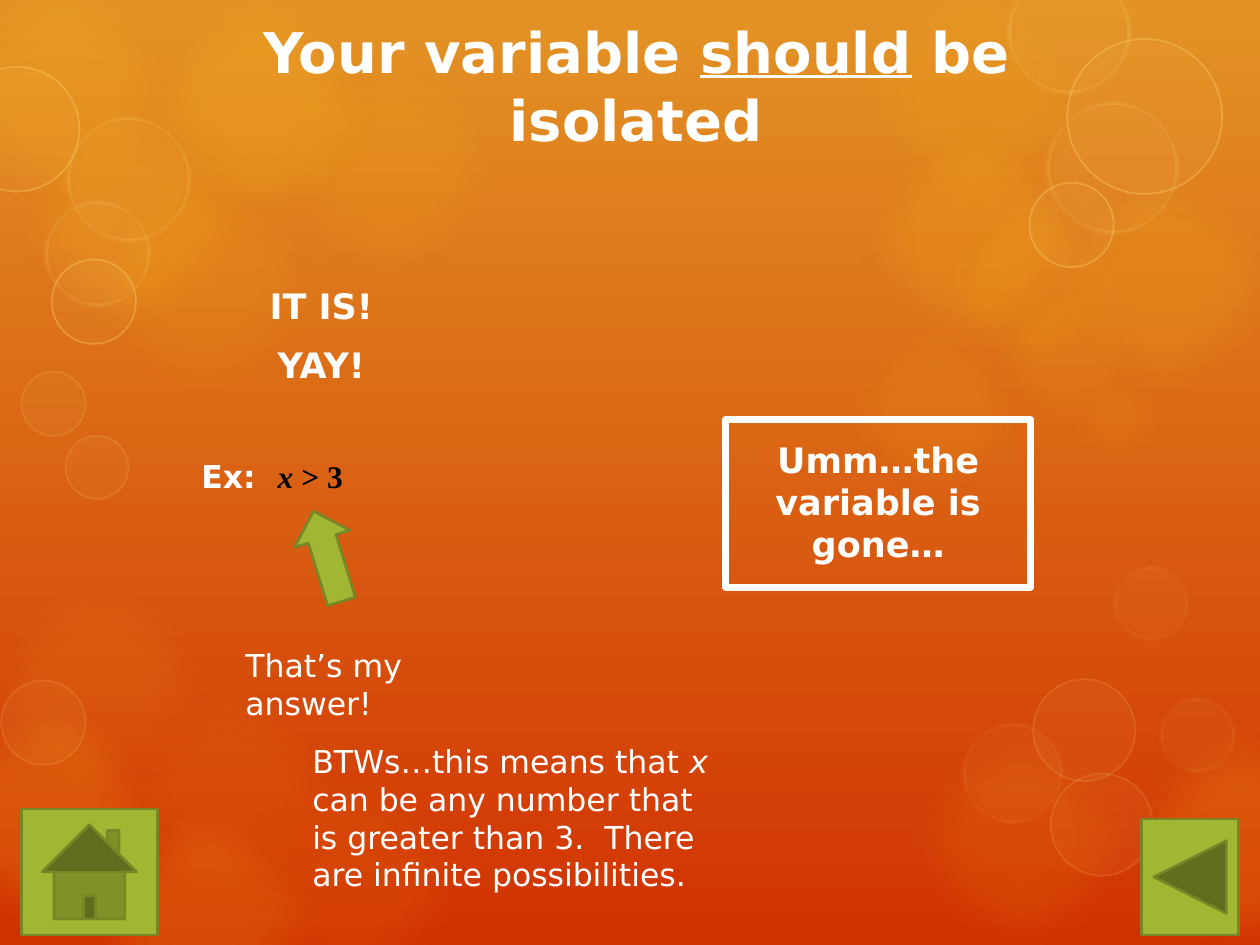
from lxml.etree import SubElement
from pptx import Presentation
from pptx.dml.color import RGBColor
from pptx.enum.shapes import MSO_SHAPE
from pptx.enum.text import MSO_ANCHOR, PP_ALIGN
from pptx.oxml.ns import qn
from pptx.util import Inches, Pt

TOP = RGBColor(0xE3, 0x93, 0x25)
BOTTOM = RGBColor(0xD1, 0x32, 0x02)
GOLD = RGBColor(0xFD, 0xC6, 0x1B)
PALE = RGBColor(0xFF, 0xE2, 0x81)
CREAM = RGBColor(0xFE, 0xEB, 0xAE)
GREEN = RGBColor(0xA1, 0xB6, 0x33)
OLIVE = RGBColor(0x77, 0x87, 0x26)
WHITE = RGBColor(0xFF, 0xFF, 0xFF)
BLACK = RGBColor(0, 0, 0)
FONT = "DejaVu Sans"
MATH_FONT = "Times New Roman"

GLOW_SIZE = 2.09
GLOWS = {
    8: [(-0.26, 4.42), (0.77, 5.24), (1.73, 5.96)],
    10: [(0.57, 1.2), (2.05, 0.31), (6.69, -0.29), (7.06, 5.62)],
    15: [(-0.56, -0.32), (0, 0.72), (8.2, 1.2), (6.69, 0.86)],
    16: [(0.57, 6.27), (8.81, 5.62), (-0.68, 5.41)],
    20: [(1.01, -0.18)],
}
HALOS = [(7.52, 1.59, 1.33), (7.89, 2.24, 1.14), (8.47, 2.91, 0.79),
         (6.75, 2.62, 1.33)]
RINGS = {
    (1, 15): [(0.01, 5.4, 0.67), (8.34, 6.14, 0.81), (8.2, 5.39, 0.81),
              (0.17, 2.95, 0.51), (0.52, 3.46, 0.5)],
    (1, 30): [(-0.36, 0.53, 0.99), (0.41, 2.06, 0.67), (8.47, 0.31, 1.23),
              (8.17, 1.45, 0.67)],
    (5, 15): [(7.63, 5.73, 0.81), (8.83, 4.48, 0.61), (9.2, 5.53, 0.61)],
    (5, 30): [(0.52, 0.92, 1), (0.35, 1.59, 0.85), (7.99, -0.24, 0.99),
              (8.3, 0.8, 1.06)],
}


def place(sp, box):
    """Move a shape to a box of left, top, width and height in inches."""
    sp.left, sp.top, sp.width, sp.height = map(Inches, box)


def set_alpha(fill, color, percent):
    """Fill with a colour at the given opacity."""
    fill.solid()
    fill.fore_color.rgb = color
    clr = fill._xPr.find(qn("a:solidFill"))[0]
    SubElement(clr, qn("a:alpha")).set("val", str(percent * 1000))


def add_bubble(s, circle, color, alpha, soft=0, line=None):
    """Add a translucent circle to the layout behind the slide."""
    x, y, d = circle
    sp = s.shapes.add_shape(MSO_SHAPE.OVAL, *map(Inches, (x, y, d, d)))
    set_alpha(sp.fill, color, alpha)
    if line:
        line_color, width, line_alpha = line
        sp.line.width = Pt(width)
        set_alpha(sp.line.fill, line_color, line_alpha)
    else:
        sp.line.fill.background()
    sp.shadow.inherit = False
    if soft:
        effects = sp._element.spPr.find(qn("a:effectLst"))
        SubElement(effects, qn("a:softEdge")).set("rad", str(Inches(soft)))
    s.slide_layout.shapes._spTree.append(sp._element)


def add_backdrop(s):
    """Paint the gradient and the bubbles."""
    fill = s.background.fill
    fill.gradient()
    fill.gradient_angle = 270
    for stop, color in zip(fill.gradient_stops, (TOP, BOTTOM)):
        stop.color.rgb = color
    for alpha, spots in GLOWS.items():
        for x, y in spots:
            add_bubble(s, (x, y, GLOW_SIZE), GOLD, alpha, 0.3)
    for circle in HALOS:
        add_bubble(s, circle, GOLD, 10, 0.2, (CREAM, 14, 6))
    for (width, line_alpha), circles in RINGS.items():
        soft = 0.05 if width > 1 else 0
        for circle in circles:
            add_bubble(s, circle, PALE, 5, soft, (PALE, width, line_alpha))


def add_run(p, text, size, bold=False, italic=None, underline=None,
            font=FONT, color=WHITE):
    """Append a formatted run to a paragraph."""
    r = p.add_run()
    r.text = text
    f = r.font
    f.size, f.name, f.bold = Pt(size), font, bold
    f.italic, f.underline = italic, underline
    f.color.rgb = color


def add_title(s, box):
    """Fill the title placeholder."""
    sp = s.shapes.title
    place(sp, box)
    sp.text_frame.vertical_anchor = MSO_ANCHOR.MIDDLE
    p = sp.text_frame.paragraphs[0]
    p.alignment = PP_ALIGN.CENTER
    add_run(p, "Your variable ", 32, True)
    add_run(p, "should", 32, True, underline=True)
    add_run(p, " be isolated", 32, True)


def add_body(s, box, lines):
    """Fill the body placeholder with centred lines without bullets."""
    sp = s.placeholders[1]
    place(sp, box)
    tf = sp.text_frame
    tf.vertical_anchor = MSO_ANCHOR.MIDDLE
    for i, text in enumerate(lines):
        p = tf.add_paragraph() if i else tf.paragraphs[0]
        p.alignment = PP_ALIGN.CENTER
        p.space_before, p.space_after = Pt(4), Pt(6)
        pPr = p._p.get_or_add_pPr()
        pPr.set("marL", "0")
        pPr.set("indent", "0")
        SubElement(pPr, qn("a:buNone"))
        add_run(p, text, 20, True)


def add_text(s, box):
    """Add a wrapping text box and return its first paragraph."""
    tf = s.shapes.add_textbox(*map(Inches, box)).text_frame
    tf.word_wrap = True
    return tf.paragraphs[0]


def add_preset(s, kind, box, fill=GREEN, line=OLIVE, width=1.5):
    """Add an outlined preset shape, hollow when fill is None."""
    sp = s.shapes.add_shape(kind, *map(Inches, box))
    sp.shadow.inherit = False
    if fill is None:
        sp.fill.background()
    else:
        sp.fill.solid()
        sp.fill.fore_color.rgb = fill
    sp.line.color.rgb = line
    sp.line.width = Pt(width)
    return sp


def add_example(s, x, y):
    """Add the worked example, its arrow and its explanation."""
    p = add_text(s, (x, y, 1.75, 0.4))
    add_run(p, "Ex:  ", 18, True)
    add_run(p, "x", 18, True, True, font=MATH_FONT, color=BLACK)
    add_run(p, " > 3", 18, True, font=MATH_FONT, color=BLACK)
    arrow = add_preset(s, MSO_SHAPE.UP_ARROW, (x + 0.87, y + 0.46, 0.46, 0.75))
    arrow.rotation = 342.8
    add_run(add_text(s, (x + 0.35, y + 1.5, 1.5, 0.71)), "That’s my answer!", 18)
    p = add_text(s, (x + 0.88, y + 2.26, 3.39, 1.31))
    add_run(p, "BTWs…this means that ", 18)
    add_run(p, "x", 18, italic=True)
    add_run(p, " can be any number that is greater than 3.  "
               "There are infinite possibilities.", 18)


def add_choice(s, x, y, w, h):
    """Add the framed button for the other answer."""
    p = add_text(s, (x, y + 0.1, w, 1.11))
    p.alignment = PP_ALIGN.CENTER
    add_run(p, "Umm…the variable is gone…", 20, True)
    add_preset(s, MSO_SHAPE.ACTION_BUTTON_CUSTOM, (x, y, w, h), None, WHITE, 4)


def main():
    """Build and save the slide."""
    prs = Presentation()
    prs.slide_width, prs.slide_height = Inches(10), Inches(7.5)
    s = prs.slides.add_slide(prs.slide_layouts[1])
    add_backdrop(s)
    add_title(s, (1.02, 0.17, 8.06, 1.01))
    add_body(s, (1.1, 1.98, 2.9, 1.36), ("IT IS!", "YAY!"))
    add_example(s, 1.5, 3.58)
    add_choice(s, 5.76, 3.33, 2.42, 1.33)
    add_preset(s, MSO_SHAPE.ACTION_BUTTON_HOME, (0.17, 6.42, 1.08, 1))
    add_preset(s, MSO_SHAPE.ACTION_BUTTON_BACK_OR_PREVIOUS, (9.06, 6.5, 0.77, 0.92))
    prs.save("out.pptx")


if __name__ == "__main__":
    main()
